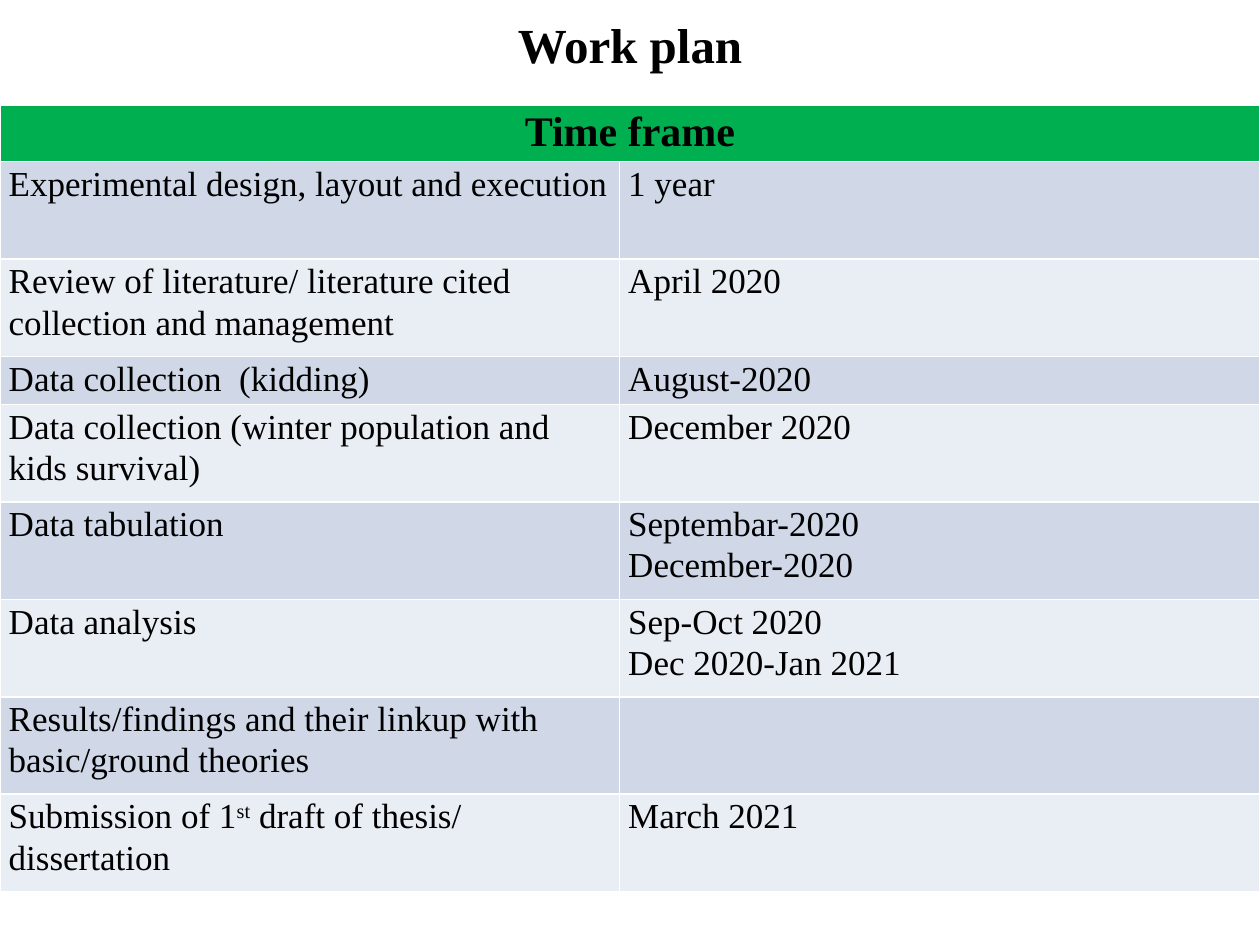
from pptx import Presentation
from pptx.dml.color import RGBColor
from pptx.enum.text import MSO_ANCHOR, PP_ALIGN
from pptx.util import Pt

COLORS = {"text": "000000", "header": "00B050", "odd": "D0D8E8", "even": "E9EDF4"}
FONT = "Times New Roman"
TALL, SHORT = 55.7, 27.4

# Task, time frame, row height; a "^" pair encloses a superscript
PLAN = [
    ("Experimental design, layout and execution", "1 year", TALL),
    ("Review of literature/ literature cited collection and management", "April 2020", TALL),
    ("Data collection  (kidding)", "August-2020", SHORT),
    ("Data collection (winter population and kids survival)", "December 2020", TALL),
    ("Data tabulation", "Septembar-2020\nDecember-2020", TALL),
    ("Data analysis", "Sep-Oct 2020\nDec 2020-Jan 2021", TALL),
    ("Results/findings and their linkup with basic/ground theories", "", TALL),
    ("Submission of 1^st^ draft of thesis/ dissertation", "March 2021", TALL),
]


def style_run(run, size, bold=False):
    run.font.name = FONT
    run.font.size = Pt(size)
    run.font.bold = bold
    run.font.color.rgb = RGBColor.from_string(COLORS["text"])


def fill_cell(cell, text, color, size=20, bold=False, align=PP_ALIGN.LEFT):
    cell.fill.solid()
    cell.fill.fore_color.rgb = RGBColor.from_string(COLORS[color])
    cell.margin_left = cell.margin_right = Pt(5)
    cell.margin_top, cell.margin_bottom = Pt(0.7), Pt(0)
    frame = cell.text_frame
    frame.text = text.replace("^", "") if "^" not in text else ""
    if "^" in text:
        for index, piece in enumerate(text.split("^")):
            run = frame.paragraphs[0].add_run()
            run.text = piece
            if index % 2:
                run.font._element.set("baseline", "30000")
    for paragraph in frame.paragraphs:
        paragraph.alignment = align
        paragraph.line_spacing = 1.06
        for run in paragraph.runs:
            style_run(run, size, bold)


prs = Presentation()
prs.slide_width, prs.slide_height = Pt(720), Pt(540)
slide = prs.slides.add_slide(prs.slide_layouts[5])

title = slide.shapes.title
title.left, title.top, title.width, title.height = Pt(0), Pt(2.2), Pt(720), Pt(46)
title.text_frame.text = "Work plan"
title.text_frame.vertical_anchor = MSO_ANCHOR.MIDDLE
title.text_frame.paragraphs[0].alignment = PP_ALIGN.CENTER
style_run(title.text_frame.paragraphs[0].runs[0], 28, bold=True)

heights = [32.4] + [height for _, _, height in PLAN]
schedule = slide.shapes.add_table(
    len(heights), 2, Pt(0), Pt(60), Pt(720), Pt(sum(heights))
).table
for column, width in zip(schedule.columns, (354, 366)):
    column.width = Pt(width)
for row, height in zip(schedule.rows, heights):
    row.height = Pt(height)

header = schedule.cell(0, 0)
header.merge(schedule.cell(0, 1))
fill_cell(header, "Time frame", "header", 24, True, PP_ALIGN.CENTER)
for number, (task, period, _) in enumerate(PLAN, start=1):
    band = "odd" if number % 2 else "even"
    fill_cell(schedule.cell(number, 0), task, band)
    fill_cell(schedule.cell(number, 1), period, band)

prs.save("out.pptx")
